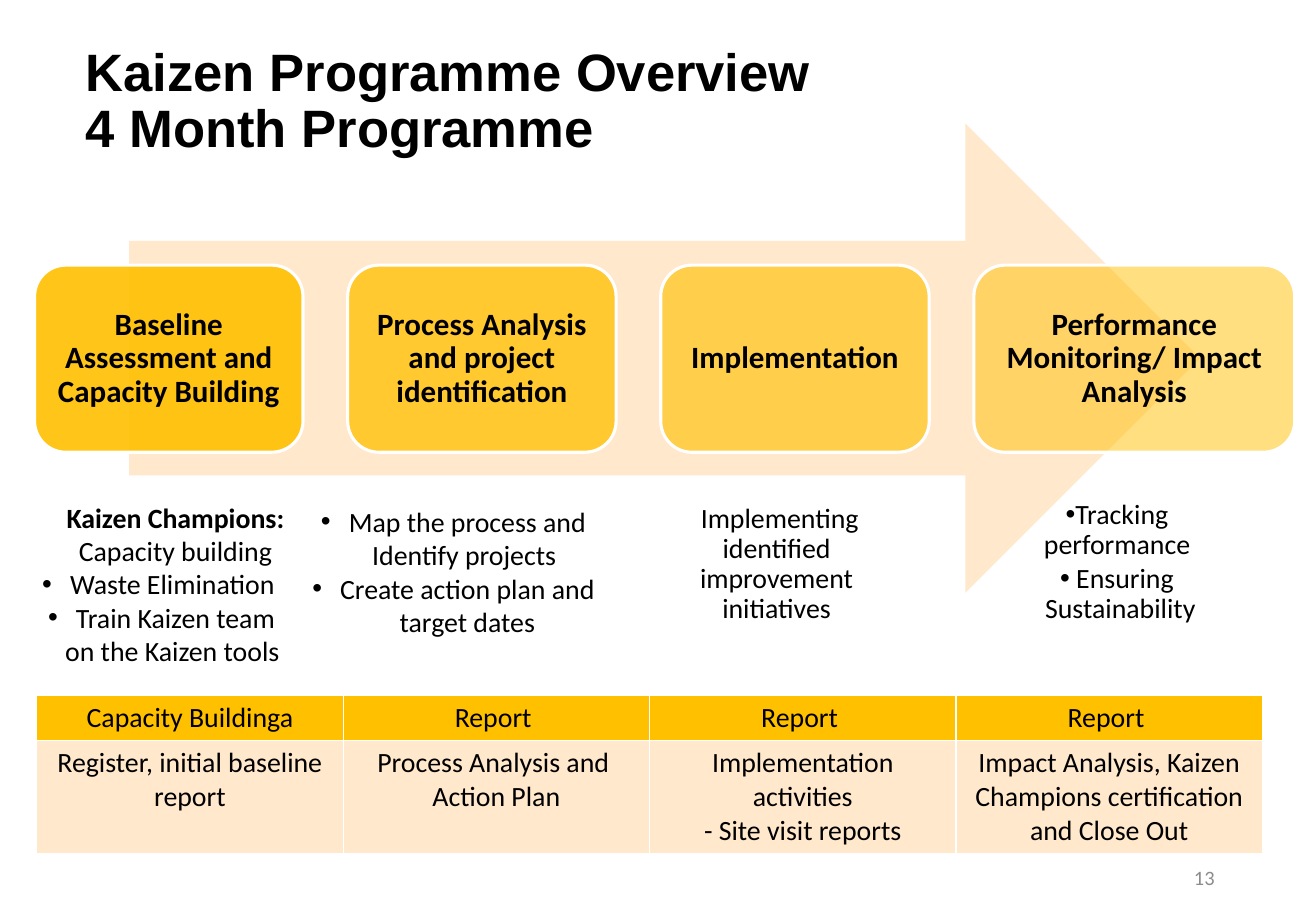
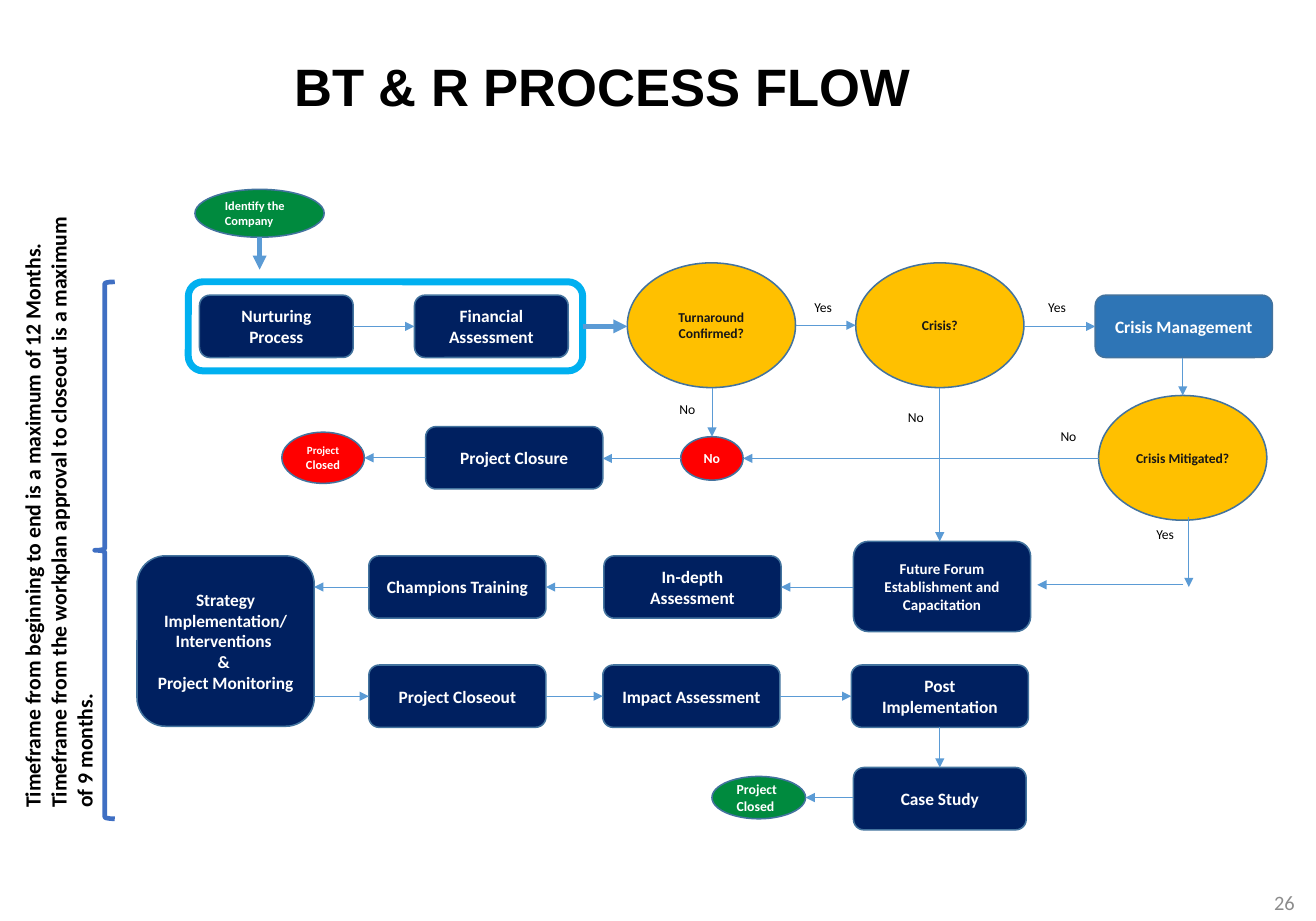
from copy import deepcopy
from lxml.etree import SubElement
from pptx import Presentation
from pptx.dml.color import RGBColor
from pptx.enum.shapes import MSO_CONNECTOR, MSO_SHAPE
from pptx.enum.text import MSO_ANCHOR, MSO_AUTO_SIZE, PP_ALIGN
from pptx.oxml.ns import qn
from pptx.util import Cm, Inches, Pt

HUES = {
    "black": "000000", "white": "FFFFFF", "grey": "8C8C8C", "ink": "181717",
    "gold": "FFC000", "cream": "FFE8CC", "navy": "002060", "blue": "2E75B6",
    "edge": "43739E", "arrow": "5B9BD5", "brace": "3F6FC3", "sky": "00B0F0",
    "green": "008A3E", "red": "FF0000",
}
ALIGN = {"l": PP_ALIGN.LEFT, "c": PP_ALIGN.CENTER, "r": PP_ALIGN.RIGHT}
ANCHOR = {"t": MSO_ANCHOR.TOP, "m": MSO_ANCHOR.MIDDLE}
ROUND, OVAL = MSO_SHAPE.ROUNDED_RECTANGLE, MSO_SHAPE.FLOWCHART_CONNECTOR


def hue(name):
    return RGBColor.from_string(HUES[name])


def say(frame, paras, size=18, font="Calibri", color="black", bold=False, align="c",
        anchor="m", gap=1.0, after=0, indent=None, pad=(0.1, 0.05)):
    """Each paragraph is a string or a list of strings, (text, changes) and None for a break."""
    frame.word_wrap = True
    frame.auto_size = MSO_AUTO_SIZE.NONE
    frame.vertical_anchor = ANCHOR[anchor]
    frame.margin_left = frame.margin_right = Inches(pad[0])
    frame.margin_top = frame.margin_bottom = Inches(pad[1])
    for n, para in enumerate(paras):
        line = frame.paragraphs[0] if n == 0 else frame.add_paragraph()
        line.alignment = ALIGN[align]
        line.line_spacing = gap
        line.space_before, line.space_after = Pt(0), Pt(after)
        if indent:
            left, hang, marks = indent
            props = line._p.get_or_add_pPr()
            props.set("marL", str(Inches(left)))
            props.set("indent", str(Inches(-hang if marks[n] else 0)))
            if marks[n]:
                SubElement(props, qn("a:buFont")).set("typeface", "Arial")
                SubElement(props, qn("a:buChar")).set("char", marks[n])
            else:
                SubElement(props, qn("a:buNone"))
        for part in [para] if isinstance(para, str) else para:
            if part is None:
                line.add_line_break()
                continue
            text, change = (part, {}) if isinstance(part, str) else part
            run = line.add_run()
            run.text = text
            run.font.name = font
            run.font.size = Pt(change.get("size", size))
            run.font.bold = change.get("bold", bold)
            run.font.color.rgb = hue(color)
        for br in line._p.findall(qn("a:br")):
            br.insert(0, deepcopy(line.runs[0]._r.rPr))


class Deck:
    def __init__(self, show):
        self.show = show

    def start(self, layout, number, spot):
        self.slide = self.show.slides.add_slide(self.show.slide_layouts[layout])
        self.shapes = self.slide.shapes
        self.label(spot + (2.66, 0.44), [str(number)], size=13.2, color="grey",
                   align="r", anchor="m")

    def place(self, shape, box):
        shape.left, shape.top, shape.width, shape.height = map(Inches, box)

    def title(self, box, paras, **form):
        self.place(self.shapes.title, box)
        say(self.shapes.title.text_frame, paras, size=34, font="Arial", bold=True, **form)

    def list(self, slot, box, paras, **form):
        body = self.slide.placeholders[slot]
        self.place(body, box)
        say(body.text_frame, paras, anchor="t", **form)

    def label(self, box, paras, turn=0, **form):
        text = self.shapes.add_textbox(*map(Inches, box))
        text.rotation = turn
        say(text.text_frame, paras, **{"align": "l", "anchor": "t", **form})

    def shape(self, kind, box, fill=None, line=None, width=1, alpha=None, back=False,
              paras=(), **form):
        item = self.shapes.add_shape(kind, *map(Inches, box))
        item.shadow.inherit = False
        if fill:
            item.fill.solid()
            item.fill.fore_color.rgb = hue(fill)
        else:
            item.fill.background()
        if alpha:
            tint = item._element.spPr.find(qn("a:solidFill"))[0]
            SubElement(tint, qn("a:alpha")).set("val", str(alpha * 1000))
        if line:
            item.line.color.rgb = hue(line)
            item.line.width = Pt(width)
        else:
            item.line.fill.background()
        if paras:
            say(item.text_frame, paras, **form)
        if back:
            self.shapes._spTree.insert(2, item._element)
        return item

    def arrow(self, start, end, width=0.5):
        line = self.shapes.add_connector(MSO_CONNECTOR.STRAIGHT, *start, *end)
        line.line.color.rgb = hue("arrow")
        line.line.width = Pt(width)
        SubElement(line.line._get_or_add_ln(), qn("a:tailEnd")).set("type", "triangle")
        SubElement(line._element.spPr, qn("a:effectLst"))

    def link(self, one, two, width=0.5):
        """Arrow between facing edges, centred on the smaller shape."""
        if one.left < two.left + two.width and two.left < one.left + one.width:
            thin = min(one, two, key=lambda s: s.width)
            x = thin.left + thin.width // 2
            self.arrow((x, one.top + one.height), (x, two.top), width)
            return
        low = min(one, two, key=lambda s: s.height)
        y = low.top + low.height // 2
        if one.left < two.left:
            self.arrow((one.left + one.width, y), (two.left, y), width)
        else:
            self.arrow((one.left, y), (two.left + two.width, y), width)

    def table(self, spot, wide, rows, highs, fills):
        grid = self.shapes.add_table(len(rows), len(rows[0]), *map(Inches, spot),
                                     Inches(wide * len(rows[0])), Inches(sum(highs))).table
        for col in grid.columns:
            col.width = Inches(wide)
        for r, row in enumerate(rows):
            grid.rows[r].height = Inches(highs[r])
            for c, paras in enumerate(row):
                cell = grid.cell(r, c)
                say(cell.text_frame, paras)
                cell.vertical_anchor = MSO_ANCHOR.TOP
                props = cell._tc.get_or_add_tcPr()
                for side in ("lnL", "lnR", "lnT", "lnB"):
                    rule = SubElement(props, qn("a:" + side), w=str(Pt(1)))
                    paint = SubElement(rule, qn("a:solidFill"))
                    SubElement(paint, qn("a:srgbClr")).set("val", HUES["white"])
                cell.fill.solid()
                cell.fill.fore_color.rgb = hue(fills[r])


def kaizen(deck):
    deck.start(4, 13, (8.34, 7.66))
    deck.title((0.72, 0.12, 10.19, 1.6),
               [["Kaizen Programme Overview", None, "4 Month Programme"]],
               align="l", gap=0.9, pad=(0.05, 0.05))
    deck.shape(MSO_SHAPE.RIGHT_ARROW, (1.16, 1.11, 9.61, 4.21), "cream", back=True)

    # Stages, fading to the right
    stages = [("Baseline Assessment and Capacity Building", 90),
              ("Process Analysis and project identification", 77),
              ("Implementation", 63),
              ("Performance Monitoring/ Impact Analysis", 50)]
    for n, (text, alpha) in enumerate(stages):
        wide = 2.88 if n == 3 else 2.41
        deck.shape(ROUND, (0.31 + 2.81 * n, 2.38, wide, 1.68), "gold", "white", 2, alpha,
                   paras=[text], size=20, bold=True, gap=0.9, pad=(0.08, 0.08))

    # Activities under each stage
    dot = "•"
    deck.list(1, (-0.06, 4.44, 2.77, 1.87),
              [[("Kaizen Champions: ", {"bold": True}), "Capacity building"],
               "Waste Elimination ", "Train Kaizen team on the Kaizen tools "],
              indent=(0.5, 0.25, ("", dot, dot)))
    deck.list(2, (2.36, 4.48, 3.17, 1.87),
              ["Map the process and Identify projects ", "Create action plan and target dates"],
              indent=(0.5, 0.25, (dot, dot)))
    deck.list(3, (5.81, 4.48, 2.32, 1.9),
              [" Implementing identified improvement initiatives"],
              gap=0.9, after=2.7, indent=(0, 0, ("",)))
    deck.list(4, (9.05, 4.44, 1.95, 1.87),
              ["Tracking performance ", " Ensuring Sustainability"],
              gap=0.9, after=2.7, indent=(0.06, 0.06, (dot, dot)))

    # Outputs
    deck.table((0.33, 6.24), 2.75,
               [[["Capacity Buildinga"]] + [["Report "]] * 3,
                [["Register, initial baseline report"],
                 ["Process Analysis and ", "Action Plan"],
                 ["Implementation activities", "- Site visit reports"],
                 ["Impact Analysis, Kaizen Champions certification and Close Out"]]],
               (0.4, 1.01), ("gold", "cream"))


def flow(deck):
    deck.start(5, 26, (9.06, 7.88))
    deck.title((0.31, -0.03, 10.19, 1.6), ["BT & R PROCESS FLOW"])

    def step(x, y, *paras, wide=1.59, high=0.56, fill="navy", size=11.2):
        return deck.shape(ROUND, (x, y, wide, high), fill, "edge", paras=paras,
                          size=size, color="white", bold=True)

    def ask(x, y, *paras):
        return deck.shape(OVAL, (x, y, 1.51, 1.12), "gold", "edge", paras=paras,
                          size=8.8, color="ink", bold=True)

    def end(box, fill, para, size=8.9, align="c"):
        return deck.shape(OVAL, box, fill, "edge", paras=[para], size=size,
                          color="white", bold=True, align=align)

    # Start and first checks
    begin = end((1.75, 1.7, 1.16, 0.43), "green", "Identify the Company", 8, "l")
    frame = deck.shape(ROUND, (1.69, 2.53, 3.54, 0.8), None, "sky", 4.5)
    nurture = step(1.79, 2.65, "Nurturing Process", wide=1.38)
    money = step(3.72, 2.65, "Financial Assessment", wide=1.38)
    turn = ask(5.63, 2.36, "Turnaround", "Confirmed?")
    crisis = ask(7.68, 2.36, "Crisis?")
    manage = step(9.83, 2.65, "Crisis Management", fill="blue")

    # Closure row
    closed = end((2.53, 3.88, 0.74, 0.46), "red",
                 [("Project ", {"size": 7.1}), ("Closed", {"size": 8})])
    closure = step(3.82, 3.83, "Project Closure")
    no = end((6.11, 3.92, 0.56, 0.39), "red", "No")
    calm = ask(9.86, 3.55, "Crisis Mitigated?")

    # Delivery rows
    plan = step(1.23, 4.99, "Strategy Implementation/ Interventions ", "& ",
                "Project Monitoring", high=1.53)
    train = step(3.31, 4.99, "Champions Training")
    depth = step(5.42, 4.99, "In-depth", "Assessment")
    forum = step(7.66, 4.86, "Future Forum Establishment and Capacitation",
                 high=0.81, size=9.7)
    closeout = step(3.31, 5.97, "Project Closeout")
    impact = step(5.41, 5.97, "Impact Assessment")
    post = step(7.64, 5.97, "Post Implementation")
    case = step(7.66, 6.89, "Case Study", wide=1.55)
    done = end((6.39, 6.97, 0.84, 0.38), "green", "Project Closed", align="l")

    # Arrows
    for chain in [(nurture, money), (turn, crisis, manage, calm, no, closure, closed),
                  (turn, no), (crisis, forum, depth, train, plan),
                  (plan, closeout, impact, post, case, done)]:
        for one, two in zip(chain, chain[1:]):
            deck.link(one, two)
    deck.link(frame, turn, 3)
    mid = begin.left + begin.width // 2
    deck.arrow((mid, begin.top + begin.height), (mid, Inches(2.42)), 3)
    for start, stop in [((10.67, 4.64), (10.67, 5.27)), ((10.62, 5.25), (9.31, 5.25))]:
        deck.arrow(tuple(map(Inches, start)), tuple(map(Inches, stop)))

    # Answers
    for x, y, text in [(7.21, 2.63, "Yes"), (9.31, 2.63, "Yes"), (10.28, 4.67, "Yes"),
                       (6, 3.55, "No"), (8.05, 3.62, "No"), (9.42, 3.79, "No")]:
        deck.label((x, y, 0.5, 0.31), [text], size=8.8)

    # Timeframe
    deck.shape(MSO_SHAPE.LEFT_BRACE, (0.85, 2.53, 0.18, 4.82), None, "brace", 3)
    deck.label((-2.3, 4.12, 5.65, 0.81),
               ["Timeframe from beginning to end is a maximum of 12 Months.",
                "Timeframe from the workplan approval to closeout is a maximum of 9 months."],
               turn=270, size=14, bold=True)


def main():
    show = Presentation()
    show.slide_width = Cm(30)
    show.slide_height = Cm(21)
    deck = Deck(show)
    kaizen(deck)
    flow(deck)
    show.save("out.pptx")


if __name__ == "__main__":
    main()
